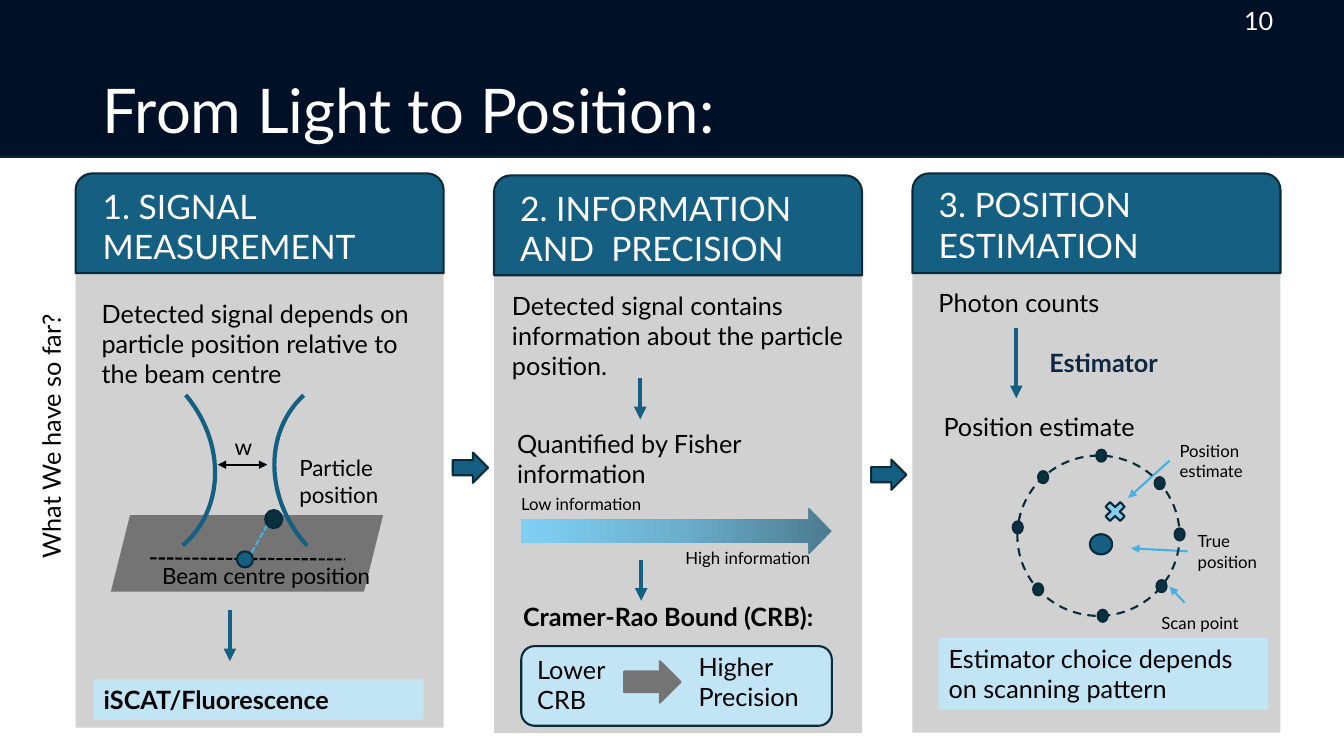
from copy import deepcopy
from math import cos, sin, radians
from pptx import Presentation
from pptx.dml.color import RGBColor
from pptx.enum.dml import MSO_LINE
from pptx.enum.shapes import MSO_SHAPE as S, MSO_CONNECTOR
from pptx.enum.text import MSO_ANCHOR, MSO_AUTO_SIZE
from pptx.oxml.ns import qn
from pptx.oxml.xmlchemy import OxmlElement
from pptx.util import Inches, Pt

WIDE, HIGH = 13.33, 7.5
LEFT, STEP, WIDTH, HEAD = 0.75, 4.15, 3.65, 0.99
FONT = "Lato"
HUES = dict(
    navy="001026", edge="092A39", teal="156082", dot="0B3041", sky="46B1E1",
    pale="C1E5F5", panel="D1D1D1", gray="747474", cross="88CDEC",
    ink="0E2841", black="000000", white="FFFFFF",
)
FADE = [(0, "4C7B90"), (0.5, "6CAFCD"), (1, "80D0F4")]

PANELS = [
    ("1. SIGNAL MEASUREMENT", 1.72, 2.67, 4.55, 0.17, 1.79),
    ("2. INFORMATION AND  PRECISION", 1.74, 2.72, 4.55, 0.16, 1.81),
    ("3. POSITION ESTIMATION", 1.72, 2.7, 4.57, 0.16, 1.78),
]

# column, offset in column, top, width, height
SHAPES = [
    (S.PARALLELOGRAM, (0, 0.35, 5.11, 2.7, 0.76), "gray", None, 0, 0),
    (S.ARC, (0, -0.78, 3.57, 2.24, 1.97), None, "teal", 3, 49.8),
    (S.ARC, (0, 1.9, 3.76, 2.24, 1.97), None, "teal", 3, 227.4),
    (S.RIGHT_ARROW, (0, 3.74, 4.49, 0.35, 0.3), "teal", "edge", 1.5, 0),
    (S.ROUNDED_RECTANGLE, (1, 0.27, 6.41, 3.08, 0.79), "pale", "edge", 1.5, 0),
    (S.RIGHT_ARROW, (1, 0.27, 5.04, 3.08, 0.46), "fade", None, 0, 0),
    (S.RIGHT_ARROW, (1, 1.29, 6.56, 0.56, 0.41), "gray", "gray", 1.5, 0),
    (S.RIGHT_ARROW, (1, 3.74, 4.56, 0.35, 0.3), "teal", "edge", 1.5, 0),
    (S.MATH_MULTIPLY, (2, 1.87, 4.94, 0.28, 0.27), "cross", "edge", 1.5, 0),
]

LINES = [
    (0, (0.74, 5.54), (2.67, 5.55), "black", 1.5, "dash"),
    (0, (1.9, 5.21), (1.74, 5.49), "sky", 1.5, "dash"),
    (0, (1.41, 4.61), (1.9, 4.61), "black", 1.5, "both"),
    (0, (1.53, 6.05), (1.53, 6.56), "teal", 3, "end"),
    (1, (1.45, 3.75), (1.45, 4.16), "teal", 3, "end"),
    (1, (1.46, 5.56), (1.46, 5.96), "teal", 3, "end"),
    (2, (1.03, 3.25), (1.03, 3.95), "teal", 3, "end"),
    (2, (2.55, 4.57), (2.14, 4.94), "sky", 1.5, "end"),
    (2, (2.7, 5.98), (2.55, 5.82), "sky", 1.5, "end"),
    (2, (2.73, 5.47), (2.17, 5.44), "sky", 1.5, "end"),
]

DOTS = [
    ((0, 1.6, 5.47, 0.16, 0.16), "teal"),
    ((0, 1.88, 5.06, 0.17, 0.18), "dot"),
    ((2, 1.76, 5.3, 0.22, 0.2), "teal"),
]
RING = (2, 1.04, 4.52, 1.61, 1.59)
SCAN = [272, 319, 359, 39, 87, 138, 186, 227]
SPOT = (0.1, 0.12)

TEXTS = [
    ("Detected signal depends on particle position relative to the beam centre",
     (0, 0.16, 2.91, 3.27, 1.01), 18, {}),
    ("w", (0, 1.48, 4.25, 1.03, 0.37), 16, {}),
    ("Particle position", (0, 2.12, 4.46, 1.03, 0.64), 16, {}),
    ("Beam centre position", (0, 0.76, 5.53, 2.41, 0.37), 16, {}),
    ("iSCAT/Fluorescence", (0, 0.18, 6.74, 3.27, 0.4), 18,
     dict(bold=True, back="pale")),
    ("Detected signal contains information about the particle position.",
     (1, 0.08, 2.83, 3.57, 1.01), 18, {}),
    ("Quantified by Fisher information", (1, 0.13, 4.2, 3.27, 0.71), 18, {}),
    ("Low information", (1, 0.17, 4.85, 2.17, 0.3), 12, {}),
    ("High information", (1, 1.8, 5.38, 2.17, 0.3), 12, {}),
    ("Cramer-Rao Bound (CRB):", (1, 0.19, 5.92, 3.27, 0.4), 18, dict(bold=True)),
    ("Lower CRB", (1, 0.33, 6.44, 1.24, 0.71), 18, {}),
    ("Higher Precision", (1, 1.93, 6.41, 1.74, 0.71), 18, {}),
    ("Photon counts", (2, 0.16, 2.8, 3.57, 0.4), 18, {}),
    ("Estimator", (2, 1.26, 3.4, 2.5, 0.4), 18, dict(bold=True, hue="ink")),
    ("Position estimate", (2, 0.21, 4.03, 3.57, 0.4), 18, {}),
    ("Position estimate", (2, 2.55, 4.32, 1.28, 0.5), 12, {}),
    ("True position", (2, 2.73, 5.22, 0.93, 0.5), 12, {}),
    ("Scan point", (2, 2.37, 6.03, 1.28, 0.3), 12, {}),
    ("Estimator choice depends on scanning pattern",
     (2, 0.26, 6.33, 3.27, 0.71), 18, dict(back="pale")),
    ("What We have so far?", (0, -1.56, 4.12, 2.63, 0.4), 18, dict(turn=270)),
    ("10", (2, 3.19, 0, 1.09, 0.4), 18, dict(hue="white")),
]

deck = Presentation()
deck.slide_width, deck.slide_height = Inches(WIDE), Inches(HIGH)
slide = deck.slides.add_slide(deck.slide_layouts[6])


def tint(name):
    return RGBColor.from_string(HUES[name])


def place(at):
    col, dx, *rest = at
    return [Inches(n) for n in (LEFT + col * STEP + dx, *rest)]


def blend(shape):
    shape.fill.gradient()
    stops = shape._element.spPr.find(".//" + qn("a:gsLst"))
    stops.append(deepcopy(stops[-1]))
    shape.fill.gradient_angle = 180
    for stop, (pos, hue) in zip(shape.fill.gradient_stops, FADE):
        stop.position = pos
        stop.color.rgb = RGBColor.from_string(hue)


def draw(kind, at, fill, edge=None, size=1.5, turn=0):
    shape = slide.shapes.add_shape(kind, *place(at))
    shape.shadow.inherit = False
    shape.rotation = turn
    if fill == "fade":
        blend(shape)
    elif fill:
        shape.fill.solid()
        shape.fill.fore_color.rgb = tint(fill)
    else:
        shape.fill.background()
    if edge:
        shape.line.color.rgb = tint(edge)
        shape.line.width = Pt(size)
    else:
        shape.line.fill.background()
    return shape


def link(col, start, end, hue, size, style):
    x, y, u, v = place((col, *start))[:2] + place((col, *end))[:2]
    line = slide.shapes.add_connector(MSO_CONNECTOR.STRAIGHT, x, y, u, v)
    line.line.color.rgb = tint(hue)
    line.line.width = Pt(size)
    if style == "dash":
        line.line.dash_style = MSO_LINE.SQUARE_DOT
    tips = {"both": ["a:headEnd", "a:tailEnd"], "end": ["a:tailEnd"]}
    for tag in tips.get(style, []):
        tip = OxmlElement(tag)
        tip.set("type", "triangle")
        line.line._get_or_add_ln().append(tip)
    line._element.spPr.append(OxmlElement("a:effectLst"))


def write(text, at, size, hue="black", bold=False, back=None, turn=0):
    box = slide.shapes.add_textbox(*place(at))
    box.rotation = turn
    if back:
        box.fill.solid()
        box.fill.fore_color.rgb = tint(back)
    frame = box.text_frame
    frame.word_wrap = True
    frame.auto_size = MSO_AUTO_SIZE.SHAPE_TO_FIT_TEXT
    run = frame.paragraphs[0].add_run()
    run.text = text
    run.font.name, run.font.size, run.font.bold = FONT, Pt(size), bold
    run.font.color.rgb = tint(hue)
    return frame


draw(S.RECTANGLE, (0, -1.23, -0.25, 14, 1.81), "navy", "edge")
title = write("From Light to Position:", (0, 0.17, 0.4, 11.5, 1.45), 44, "white")
title.auto_size = MSO_AUTO_SIZE.NONE
title.vertical_anchor = MSO_ANCHOR.MIDDLE
title.paragraphs[0].line_spacing = 0.9

for col, (name, top, body, tall, dx, y) in enumerate(PANELS):
    draw(S.RECTANGLE, (col, 0, body, WIDTH, tall), "panel")
    draw(S.ROUND_2_SAME_RECTANGLE, (col, 0, top, WIDTH, HEAD), "teal", "edge")
    write(name, (col, dx, y, 3.48, 0.91), 24, "white")

for item in SHAPES:
    draw(*item)
for item in LINES:
    link(*item)

draw(S.OVAL, RING, None, "edge").line.dash_style = MSO_LINE.DASH
col, dx, y, w, h = RING
for turn in SCAN:
    px = dx + w / 2 * (1 + cos(radians(turn))) - SPOT[0] / 2
    py = y + h / 2 * (1 + sin(radians(turn))) - SPOT[1] / 2
    DOTS.append(((col, px, py, *SPOT), "dot"))
for at, hue in DOTS:
    draw(S.OVAL, at, hue, "edge")

for text, at, size, look in TEXTS:
    write(text, at, size, **look)

deck.save("out.pptx")
